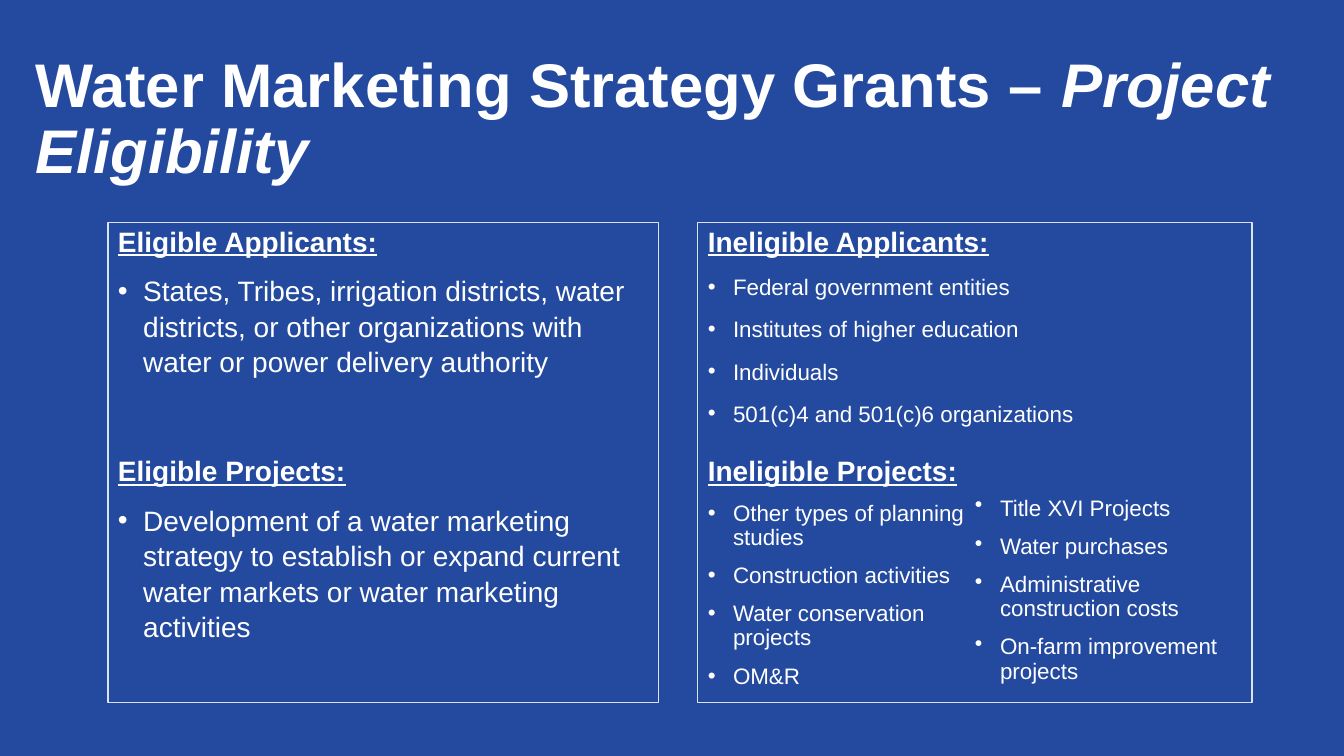
from dataclasses import dataclass

from lxml import etree
from pptx import Presentation
from pptx.dml.color import RGBColor
from pptx.enum.shapes import MSO_SHAPE
from pptx.enum.text import MSO_ANCHOR, MSO_AUTO_SIZE, PP_ALIGN
from pptx.oxml.ns import qn
from pptx.util import Inches, Pt

RECT = MSO_SHAPE.RECTANGLE
TOP, MIDDLE = MSO_ANCHOR.TOP, MSO_ANCHOR.MIDDLE
FIXED = MSO_AUTO_SIZE.NONE
LEFT = PP_ALIGN.LEFT

FONT = "Arial"
COLORS = {"back": "244A9F", "text": "FFFFFF", "frame": "DAE3F3"}
COMPARE = 4  # layout with a title and four body placeholders

LEFT_X, RIGHT_X = 1.07, 6.92
LEFT_W, RIGHT_W = 5.46, 5.5
UPPER_Y, LOWER_Y = 2.21, 4.49
FRAME_H = 4.76
HALF_W = 2.85
HALF_X = RIGHT_X + RIGHT_W / 2 - 0.1


@dataclass
class Box:
    left: float
    top: float
    width: float
    height: float


@dataclass
class Block:
    box: Box
    head: str
    items: list[str]
    size: int
    lines: float


BLOCKS = [
    Block(Box(LEFT_X, UPPER_Y, LEFT_W, 1.91), "Eligible Applicants:", [
        "States, Tribes, irrigation districts, water districts, or other "
        "organizations with water or power delivery authority",
    ], 20, 1.05),
    Block(Box(LEFT_X, LOWER_Y, LEFT_W, 2.07), "Eligible Projects:", [
        "Development of a water marketing strategy to establish or expand "
        "current water markets or water marketing activities",
    ], 20, 1.05),
    Block(Box(RIGHT_X, UPPER_Y, RIGHT_W, 2.14), "Ineligible Applicants:", [
        "Federal government entities",
        "Institutes of higher education",
        "Individuals",
        "501(c)4 and 501(c)6 organizations",
    ], 16, 1.05),
    Block(Box(RIGHT_X, LOWER_Y, HALF_W, 2.47), "Ineligible Projects:", [
        "Other types of planning studies",
        "Construction activities",
        "Water conservation projects",
        "OM&R",
    ], 16, 0.9),
]
MORE = Block(Box(HALF_X, 4.88, HALF_W, 2.08), "", [
    "Title XVI Projects",
    "Water purchases",
    "Administrative construction costs",
    "On-farm improvement projects",
], 16, 0.9)
FRAMES = [
    Box(LEFT_X, UPPER_Y, LEFT_W, FRAME_H),
    Box(RIGHT_X, UPPER_Y, RIGHT_W, FRAME_H),
]


def color(name: str) -> RGBColor:
    return RGBColor.from_string(COLORS[name])


def sides(box: Box) -> list[int]:
    return [Inches(n) for n in (box.left, box.top, box.width, box.height)]


def place(shape, box: Box) -> None:
    shape.left, shape.top, shape.width, shape.height = sides(box)


def set_bullet(para, shown: bool) -> None:
    props = para._p.get_or_add_pPr()
    indent = Inches(0.25) if shown else 0
    props.set("marL", str(indent))
    props.set("indent", str(-indent))
    if shown:
        etree.SubElement(props, qn("a:buChar")).set("char", "•")
    else:
        etree.SubElement(props, qn("a:buNone"))


def set_font(para, size: int, bold: bool, under: bool = False) -> None:
    font = para.font
    font.name, font.size = FONT, Pt(size)
    font.bold, font.underline = bold, under
    font.color.rgb = color("text")


def add_title(slide) -> None:
    title = slide.shapes.title
    place(title, Box(0.25, 0.47, 12.8, 1.45))
    frame = title.text_frame
    frame.auto_size, frame.vertical_anchor = FIXED, MIDDLE
    para = frame.paragraphs[0]
    para.alignment, para.line_spacing = LEFT, 0.9
    set_font(para, 44, True)
    para.add_run().text = "Water Marketing Strategy Grants – "
    run = para.add_run()
    run.text = "Project Eligibility"
    run.font.italic = True


def fill_block(shape, block: Block) -> None:
    """Write the underlined heading, if any, and the bullets below it."""
    place(shape, block.box)
    frame = shape.text_frame
    frame.word_wrap = True
    frame.auto_size, frame.vertical_anchor = FIXED, TOP
    texts = [block.head, *block.items] if block.head else block.items
    for i, text in enumerate(texts):
        para = frame.add_paragraph() if i else frame.paragraphs[0]
        is_head = text == block.head
        para.text = text
        para.alignment = LEFT
        para.line_spacing = 0.9 if is_head else block.lines
        para.space_before = Pt(10 if i else 0)
        para.space_after = Pt(0)
        set_bullet(para, not is_head)
        set_font(para, 20 if is_head else block.size, is_head, is_head)


def add_frame(slide, box: Box) -> None:
    shape = slide.shapes.add_shape(RECT, *sides(box))
    shape.shadow.inherit = False
    shape.fill.background()
    shape.line.color.rgb = color("frame")
    shape.line.width = Pt(1)


def main() -> None:
    deck = Presentation()
    deck.slide_width, deck.slide_height = Inches(13.33), Inches(7.5)
    slide = deck.slides.add_slide(deck.slide_layouts[COMPARE])
    back = slide.background.fill
    back.solid()
    back.fore_color.rgb = color("back")

    add_title(slide)
    for i, block in enumerate(BLOCKS, start=1):
        fill_block(slide.placeholders[i], block)
    fill_block(slide.shapes.add_textbox(*sides(MORE.box)), MORE)
    for box in FRAMES:
        add_frame(slide, box)
    deck.save("out.pptx")


if __name__ == "__main__":
    main()
